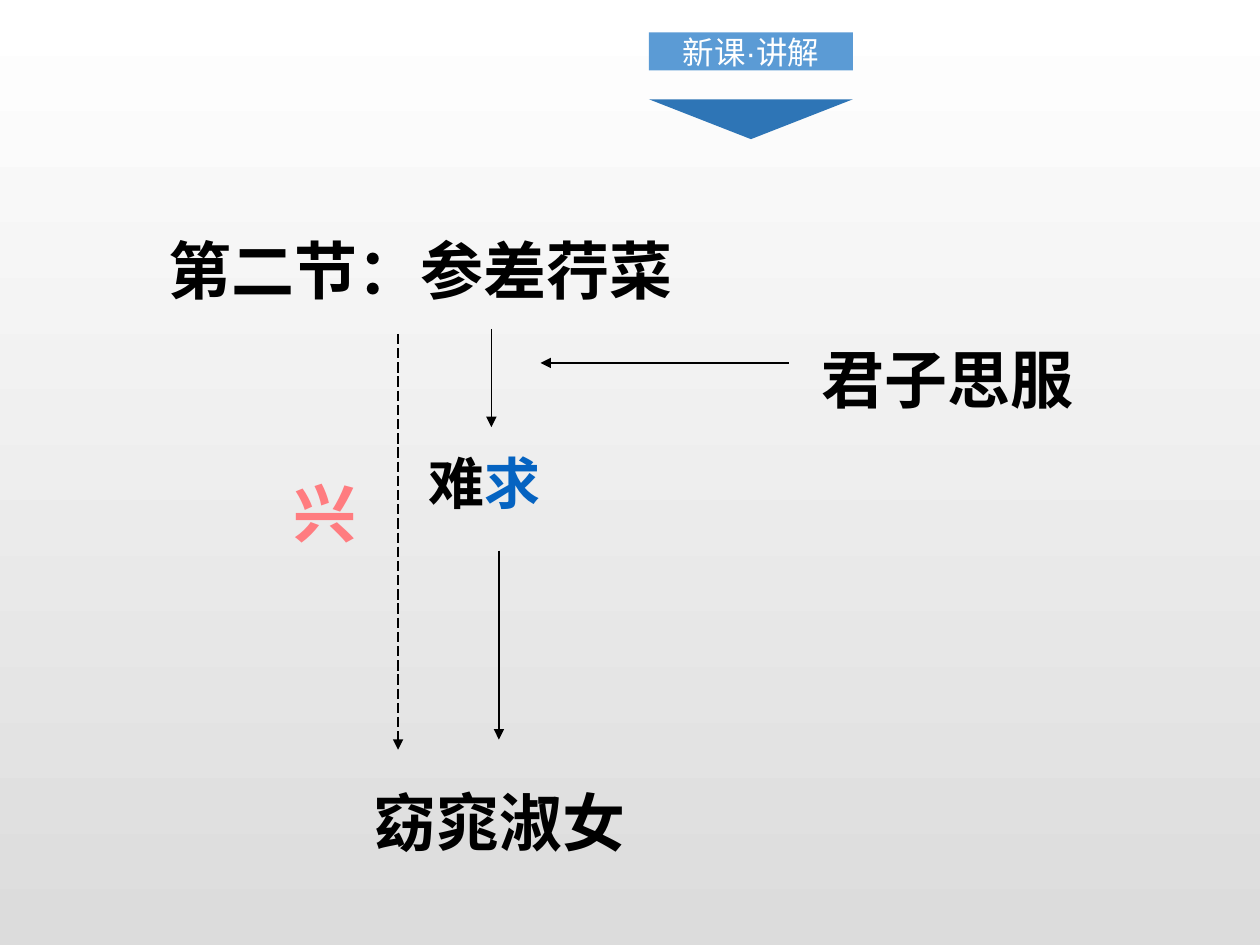
from lxml.etree import SubElement as Sub
from pptx import Presentation
from pptx.dml.color import RGBColor as Rgb
from pptx.enum.dml import MSO_LINE as Dash
from pptx.enum.shapes import MSO_CONNECTOR as Link, MSO_SHAPE as Kind
from pptx.enum.text import MSO_ANCHOR as Anchor, PP_ALIGN as Align
from pptx.oxml.ns import qn
from pptx.util import Pt

HUES = {
    "top": "FFFFFF", "base": "DCDCDC", "ink": "000000", "white": "FFFFFF",
    "blue": "0563C1", "rose": "FF7C80", "band": "5B9BD5", "tip": "2E75B6",
}


def hue(name):
    """Return the named colour."""
    return Rgb.from_string(HUES[name])


def write(shape, *runs, size=36, bold=True, align=Align.LEFT, anchor=Anchor.TOP, inset=None):
    """Fill a shape with one line of (text, colour) runs."""
    frame = shape.text_frame
    frame.word_wrap = True
    frame.vertical_anchor = anchor
    if inset is not None:
        frame.margin_left = frame.margin_right = Pt(inset)
        frame.margin_top = frame.margin_bottom = Pt(inset)
    line = frame.paragraphs[0]
    line.alignment = align
    for text, tint in runs:
        run = line.add_run()
        run.text = text
        font = run.font
        font.name, font.size, font.bold = "Arial", Pt(size), bold
        font.color.rgb = hue(tint)
        Sub(font._element, qn("a:ea"), typeface="Arial")


def block(group, kind, tint, x, y, wide, high):
    """Add a plain filled shape to a group."""
    shape = group.shapes.add_shape(kind, Pt(x), Pt(y), Pt(wide), Pt(high))
    shape.shadow.inherit = False
    shape.fill.solid()
    shape.fill.fore_color.rgb = hue(tint)
    shape.line.fill.background()
    return shape


def arrow(slide, start, end, dash=None):
    """Draw a thin arrow from start to end."""
    link = slide.shapes.add_connector(Link.STRAIGHT, *map(Pt, start + end))
    link.line.width = Pt(0.75)
    link.line.color.rgb = hue("ink")
    if dash:
        link.line.dash_style = dash
    Sub(link.line._get_or_add_ln(), qn("a:tailEnd"), type="triangle")
    Sub(link._element.spPr, qn("a:effectLst"))


def header(slide, x, y, wide, high):
    """Place the section label above its downward tip."""
    group = slide.shapes.add_group_shape()
    band = block(group, Kind.RECTANGLE, "band", x, y, wide, 21.8)
    write(band, ("新课·讲解", "white"), size=18, bold=False,
          align=Align.CENTER, anchor=Anchor.MIDDLE, inset=0)
    tip = block(group, Kind.ISOSCELES_TRIANGLE, "tip", x, y + high - 22.8, wide, 22.8)
    tip.rotation = 180


def diagram(slide, x, y):
    """Place the verse phrases and the arrows between them."""
    phrases = [
        (0, 0, 323.3, 36, [("第二节：参差荇菜", "ink")]),
        (148.3, 123.8, 86.4, 32, [("难", "ink"), ("求", "blue")]),
        (117.3, 315.3, 169.9, 36, [("窈窕淑女", "ink")]),
        (372.9, 61.9, 187.2, 36, [("君子思服", "ink")]),
        (71.3, 138.9, 53.3, 36, [("兴", "rose")]),
    ]
    for left, top, wide, size, runs in phrases:
        high = size * 1.22 + 7.2
        box = slide.shapes.add_textbox(Pt(x + left), Pt(y + top), Pt(wide), Pt(high))
        write(box, *runs, size=size)
    arrows = [
        (191.5, 59, 191.5, 115.2, None),
        (195.8, 185.7, 195.8, 293.7, None),
        (361.4, 78.5, 219.6, 78.5, None),
        (138.2, 61.9, 138.2, 299.5, Dash.LONG_DASH),
    ]
    for x1, y1, x2, y2, dash in arrows:
        arrow(slide, (x + x1, y + y1), (x + x2, y + y2), dash)


def backdrop(slide):
    """Shade the background from top to base."""
    fill = slide.background.fill
    fill.gradient()
    fill.gradient_angle = 270
    for stop, name, place in zip(fill.gradient_stops, ("top", "base"), (0, 1)):
        stop.color.rgb = hue(name)
        stop.position = place


def main():
    """Build and save the slide."""
    deck = Presentation()
    deck.slide_width, deck.slide_height = Pt(720), Pt(540)
    slide = deck.slides.add_slide(deck.slide_layouts[6])
    backdrop(slide)
    diagram(slide, 89.3, 128.9)
    header(slide, 370.8, 18.5, 116.6, 61)
    deck.save("out.pptx")


if __name__ == "__main__":
    main()
